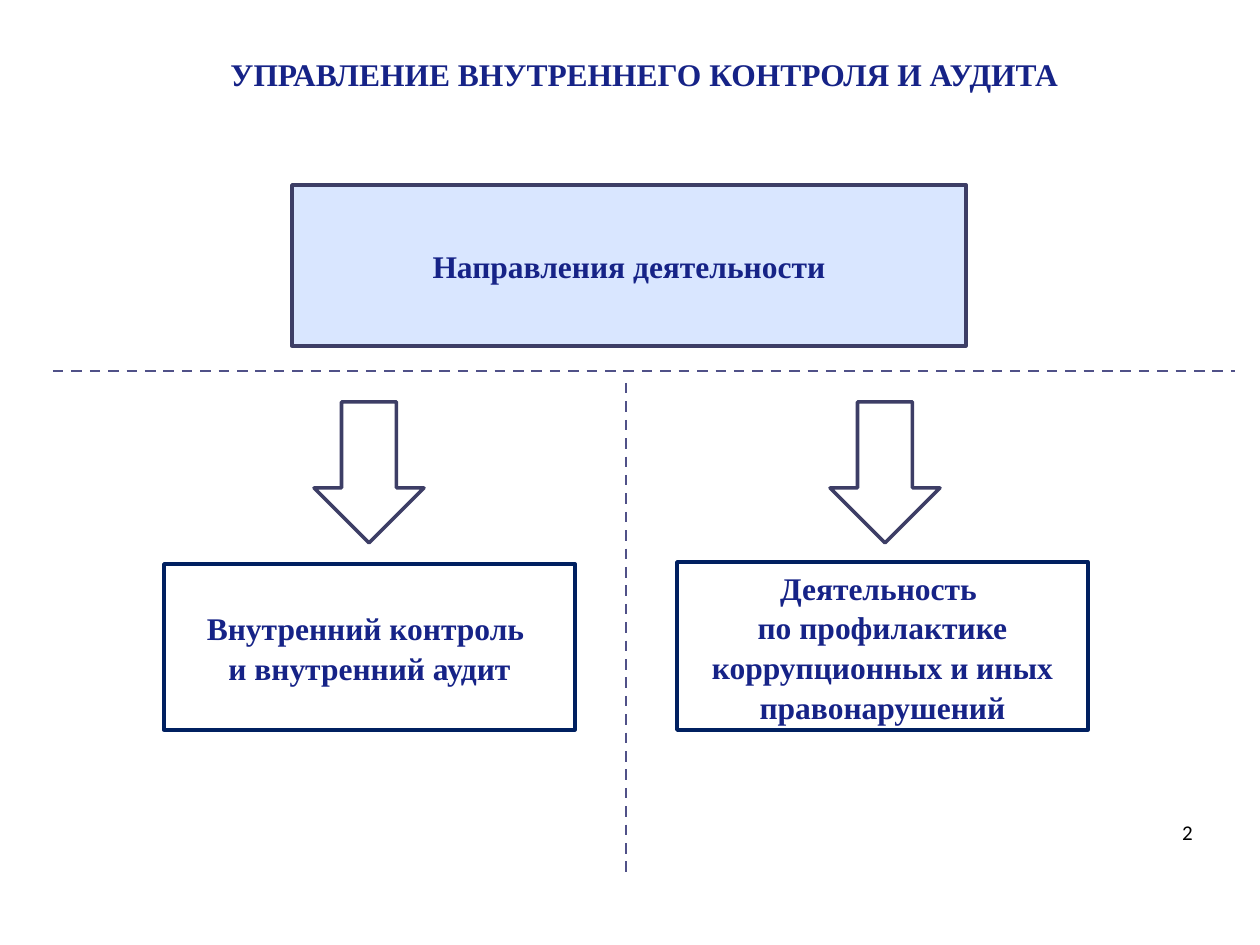
"""Build the slide on the directions of internal control and audit."""
import pptx
import pptx.util
import pptx.dml.color
import pptx.enum.dml
import pptx.enum.shapes
import pptx.enum.text
from lxml import etree

COLORS = {"text": "162387", "black": "000000", "white": "FFFFFF", "pale": "D9E6FF",
          "slate": "3D3E66", "navy": "002060", "dash": "505188"}
SERIF = "Times New Roman"
SHAPE = pptx.enum.shapes.MSO_SHAPE
ALIGN = pptx.enum.text.PP_ALIGN
ANCHOR = pptx.enum.text.MSO_ANCHOR

TITLE = "УПРАВЛЕНИЕ ВНУТРЕННЕГО КОНТРОЛЯ И АУДИТА"
PAGE = "2"
BOXES = [
    ((292, 185, 674, 161), "pale", "slate", ["Направления деятельности"]),
    ((164, 564, 411, 166), "white", "navy", ["Внутренний контроль \nи внутренний аудит"]),
    ((677, 562, 411, 168), "white", "navy",
     ["Деятельность ", "по профилактике коррупционных и иных правонарушений"]),
]
ARROWS = [(314, 402, 110, 141), (830, 402, 110, 141)]
DIVIDERS = [(626, 383, 626, 879), (53, 371, 1235, 371)]


def px(n):
    return pptx.util.Emu(n * 914400 // 126)


def rgb(name):
    return pptx.dml.color.RGBColor.from_string(COLORS[name])


def write(sp, paragraphs, size=18, font=SERIF, color="text", bold=True,
          align=ALIGN.CENTER, anchor=ANCHOR.MIDDLE, spacing=1.05):
    tf = sp.text_frame
    tf.word_wrap = True
    tf.vertical_anchor = anchor
    for i, text in enumerate(paragraphs):
        p = tf.add_paragraph() if i else tf.paragraphs[0]
        p.alignment = align
        p.line_spacing = spacing
        for j, part in enumerate(text.split("\n")):
            if j:
                p.add_line_break()
            r = p.add_run()
            r.text = part
            r.font.size = pptx.util.Pt(size)
            r.font.name = font
            r.font.bold = bold
            r.font.color.rgb = rgb(color)


def add_shape(s, kind, box, fill, line):
    sp = s.shapes.add_shape(kind, *map(px, box))
    sp.shadow.inherit = False
    sp.fill.solid()
    sp.fill.fore_color.rgb = rgb(fill)
    sp.line.color.rgb = rgb(line)
    sp.line.width = pptx.util.Pt(2)
    return sp


def add_divider(s, ends):
    sp = s.shapes.add_connector(pptx.enum.shapes.MSO_CONNECTOR.STRAIGHT, *map(px, ends))
    sp.line.color.rgb = rgb("dash")
    sp.line.width = pptx.util.Pt(1.5)
    sp.line.dash_style = pptx.enum.dml.MSO_LINE.DASH
    etree.SubElement(sp._element.spPr, pptx.oxml.ns.qn("a:effectLst"))


def main():
    prs = pptx.Presentation()
    prs.slide_width, prs.slide_height = px(1260), px(945)
    s = prs.slides.add_slide(prs.slide_layouts[6])
    write(s.shapes.add_textbox(*map(px, (79, 47, 1131, 78))), [TITLE], anchor=ANCHOR.TOP)
    for box, fill, line, paragraphs in BOXES:
        write(add_shape(s, SHAPE.RECTANGLE, box, fill, line), paragraphs)
    for box in ARROWS:
        add_shape(s, SHAPE.DOWN_ARROW, box, "white", "slate")
    for ends in DIVIDERS:
        add_divider(s, ends)
    write(s.shapes.add_textbox(*map(px, (911, 813, 294, 38))), [PAGE], 12, "Calibri",
          "black", False, ALIGN.RIGHT, spacing=1.0)
    prs.save("out.pptx")


if __name__ == "__main__":
    main()
